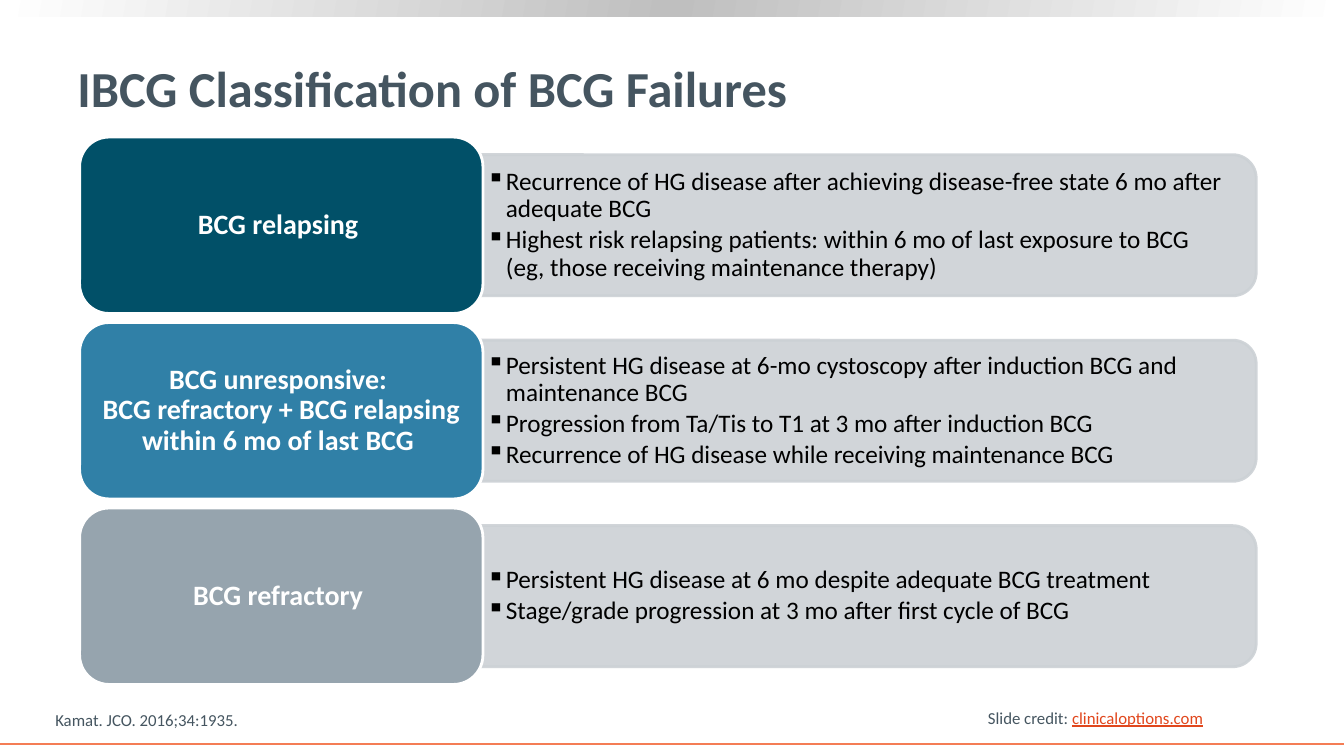
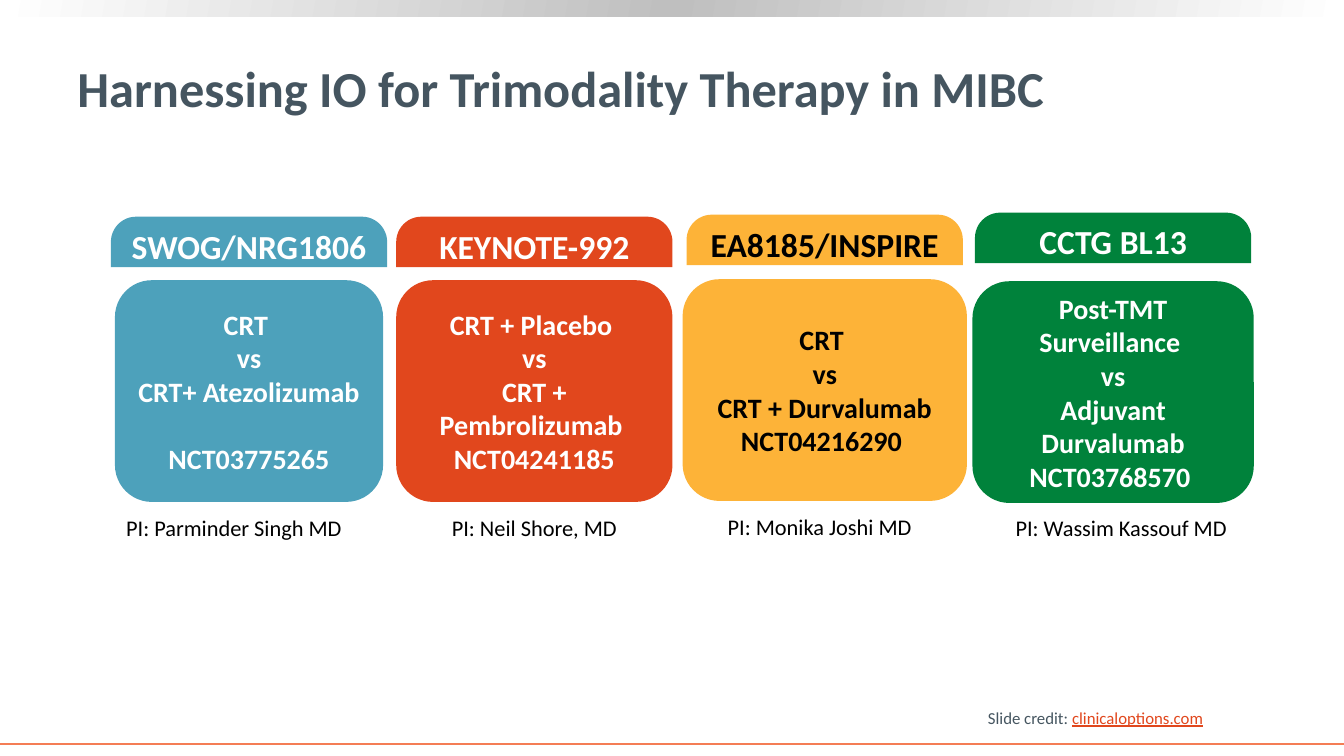
"""Builds two slides on bladder cancer: BCG failure classes and trimodality trials."""
from copy import deepcopy

from lxml import etree
from pptx import Presentation
from pptx.dml.color import RGBColor
from pptx.enum.shapes import MSO_CONNECTOR, MSO_SHAPE
from pptx.enum.text import MSO_ANCHOR, PP_ALIGN
from pptx.oxml.ns import qn
from pptx.util import Inches, Pt

ROUND = MSO_SHAPE.ROUNDED_RECTANGLE
TAB = MSO_SHAPE.ROUND_2_SAME_RECTANGLE
RECT = MSO_SHAPE.RECTANGLE
STRAIGHT = MSO_CONNECTOR.STRAIGHT
MIDDLE, BOTTOM, TOP = MSO_ANCHOR.MIDDLE, MSO_ANCHOR.BOTTOM, MSO_ANCHOR.TOP
LEFT, CENTER = PP_ALIGN.LEFT, PP_ALIGN.CENTER

FONT = "Calibri"
WIDTH, HEIGHT = 13.33, 7.5
WHITE = RGBColor(0xFF, 0xFF, 0xFF)
BLACK = RGBColor(0x00, 0x00, 0x00)
SILVER = RGBColor(0xBF, 0xBF, 0xBF)
SLATE = RGBColor(0x45, 0x55, 0x60)
CORAL = RGBColor(0xF4, 0x7D, 0x55)
ORANGE = RGBColor(0xE1, 0x47, 0x1D)
PANEL = RGBColor(0xCC, 0xD1, 0xD5)
NAVY = RGBColor(0x01, 0x50, 0x68)
BLUE = RGBColor(0x30, 0x80, 0xA7)
STEEL = RGBColor(0x96, 0xA4, 0xAE)
TEAL = RGBColor(0x4D, 0xA1, 0xBB)
AMBER = RGBColor(0xFD, 0xB3, 0x38)
GREEN = RGBColor(0x00, 0x82, 0x3B)

CLASS_TITLE = "IBCG Classification of BCG Failures"
CITATION = "Kamat. JCO. 2016;34:1935."
CLASSES = [
    ("BCG relapsing ", NAVY, [
        "Recurrence of HG disease after achieving disease-free state 6 mo after adequate BCG",
        "Highest risk relapsing patients: within 6 mo of last exposure to BCG \n"
        "(eg, those receiving maintenance therapy)"]),
    ("BCG unresponsive: \nBCG refractory + BCG relapsing within 6 mo of last BCG ", BLUE, [
        "Persistent HG disease at 6-mo cystoscopy after induction BCG and maintenance BCG",
        "Progression from Ta/Tis to T1 at 3 mo after induction BCG",
        "Recurrence of HG disease while receiving maintenance BCG"]),
    ("BCG refractory ", STEEL, [
        "Persistent HG disease at 6 mo despite adequate BCG treatment",
        "Stage/grade progression at 3 mo after first cycle of BCG"]),
]

TRIAL_TITLE = "Harnessing IO for Trimodality Therapy in MIBC"
TRIALS = [
    dict(name="SWOG/NRG1806", fill=TEAL, ink=WHITE, center=2.47, tab_top=2.15,
         card_top=2.78, card_width=2.66, id_gap=24, lead="PI: Parminder Singh MD",
         lead_center=2.32, lead_top=5.05,
         arms=["CRT ", "vs", "CRT+ Atezolizumab", "NCT03775265"]),
    dict(name="KEYNOTE-992", fill=ORANGE, ink=WHITE, center=5.3, tab_top=2.15,
         card_top=2.78, card_width=2.74, id_gap=0, lead="PI: Neil Shore, MD",
         lead_center=5.3, lead_top=5.05,
         arms=["CRT + Placebo ", "vs", "CRT + Pembrolizumab ", "NCT04241185"]),
    dict(name="EA8185/INSPIRE", fill=AMBER, ink=BLACK, center=8.18, tab_top=2.13,
         card_top=2.77, card_width=2.82, id_gap=0, lead="PI: Monika Joshi MD",
         lead_center=8.13, lead_top=5.04,
         arms=["CRT ", "vs", "CRT + Durvalumab", "NCT04216290 "]),
    dict(name="CCTG BL13", fill=GREEN, ink=WHITE, center=11.04, tab_top=2.11,
         card_top=2.79, card_width=2.79, id_gap=0, lead="PI: Wassim Kassouf MD",
         lead_center=11.12, lead_top=5.05,
         arms=["Post-TMT", "Surveillance ", "vs", "Adjuvant Durvalumab", "NCT03768570 "]),
]


def add_span(para, text, size, color, bold=False, underline=False):
    for index, piece in enumerate(text.split("\n")):
        if index:
            para.add_line_break()
        span = para.add_run()
        span.text = piece
        font = span.font
        font.name, font.size, font.bold = FONT, Pt(size), bold
        font.underline = underline
        font.color.rgb = color


def write(box, texts, size, color, bold=False, align=CENTER, anchor=MIDDLE, wrap=True):
    frame = box.text_frame
    frame.word_wrap, frame.vertical_anchor = wrap, anchor
    for index, text in enumerate(texts):
        para = frame.add_paragraph() if index else frame.paragraphs[0]
        para.alignment = align
        add_span(para, text, size, color, bold)
    return frame


def add_text(page, place, text, size, color, **style):
    box = page.shapes.add_textbox(*map(Inches, place))
    return write(box, [text], size, color, **style)


def add_block(page, kind, place, fill, line=None):
    block = page.shapes.add_shape(kind, *map(Inches, place))
    block.shadow.inherit = False
    block.fill.solid()
    block.fill.fore_color.rgb = fill
    if line is None:
        block.line.fill.background()
    else:
        block.line.color.rgb = line
        block.line.width = Pt(2)
    return block


def add_page(deck, title):
    page = deck.slides.add_slide(deck.slide_layouts[6])
    band = add_block(page, RECT, (0, 0, WIDTH, 0.16), WHITE)
    band.fill.gradient()
    band.fill.gradient_angle = 170
    for stop, color, position in zip(band.fill.gradient_stops, (WHITE, SILVER), (0, 0.5)):
        stop.color.rgb, stop.position = color, position
    stops = next(band._element.iter(qn("a:gsLst")))
    last = deepcopy(stops[0])
    last.set("pos", "100000")
    stops.append(last)

    rule = page.shapes.add_connector(
        STRAIGHT, 0, Inches(7.38), Inches(WIDTH), Inches(7.38))
    rule.line.color.rgb = CORAL
    rule.line.width = Pt(1.5)
    etree.SubElement(rule._element.spPr, qn("a:effectLst"))

    credit = add_text(page, (9.7, 6.97, 2.36, 0.3), "Slide credit: ", 12, SLATE,
                      align=LEFT, anchor=TOP, wrap=False)
    add_span(credit.paragraphs[0], "clinicaloptions.com", 12, ORANGE, underline=True)
    add_text(page, (0.67, 0.26, 12.18, 1.21), title, 36, SLATE, bold=True, align=LEFT)
    return page


def add_bullet(para):
    props = para._p.get_or_add_pPr()
    props.set("marL", str(Inches(0.19)))
    props.set("indent", str(-Inches(0.19)))
    etree.SubElement(props, qn("a:buChar")).set("char", "▪")
    para.line_spacing = 0.9
    para.space_after = Pt(2.7)


def build_classes(deck):
    page = add_page(deck, CLASS_TITLE)
    top, pitch, label_height, panel_height = 1.36, 1.84, 1.75, 1.4
    left, label_width, panel_left, panel_right = 0.79, 4, 4.3, 12.46
    for row, (name, color, findings) in enumerate(CLASSES):
        label_top = top + row * pitch
        panel_top = label_top + (label_height - panel_height) / 2
        panel = add_block(
            page, ROUND, (panel_left, panel_top, panel_right - panel_left, panel_height),
            PANEL, PANEL)
        for tint in panel._element.spPr.iter(qn("a:srgbClr")):
            etree.SubElement(tint, qn("a:alpha")).set("val", "90000")
        frame = write(panel, findings, 18, BLACK, align=LEFT)
        frame.margin_left, frame.margin_right = Inches(0.46), Inches(0.07)
        for para in frame.paragraphs:
            add_bullet(para)
        label = add_block(page, ROUND, (left, label_top, label_width, label_height),
                          color, WHITE)
        frame = write(label, [name], 20, WHITE, bold=True)
        frame.paragraphs[0].line_spacing = 0.9
    add_text(page, (0.45, 6.99, 8.59, 0.3), CITATION, 12, SLATE, align=LEFT, anchor=BOTTOM)


def build_trials(deck):
    page = add_page(deck, TRIAL_TITLE)
    tab_width, lead_width = 2.74, 2.44
    for trial in TRIALS:
        center, fill, ink = trial["center"], trial["fill"], trial["ink"]
        tab = add_block(
            page, TAB, (center - tab_width / 2, trial["tab_top"], tab_width, 0.5), fill)
        tab.adjustments[0] = 0.5
        write(tab, [trial["name"]], 24, ink, bold=True, wrap=False)
        width = trial["card_width"]
        card = add_block(page, ROUND, (center - width / 2, trial["card_top"], width, 2.2), fill)
        frame = write(card, trial["arms"], 20, ink, bold=True)
        frame.paragraphs[-1].space_before = Pt(trial["id_gap"])
        place = (trial["lead_center"] - lead_width / 2, trial["lead_top"], lead_width, 0.37)
        add_text(page, place, trial["lead"], 16, BLACK, anchor=BOTTOM)


def main():
    deck = Presentation()
    deck.slide_width, deck.slide_height = Inches(WIDTH), Inches(HEIGHT)
    build_classes(deck)
    build_trials(deck)
    deck.save("out.pptx")


if __name__ == "__main__":
    main()
